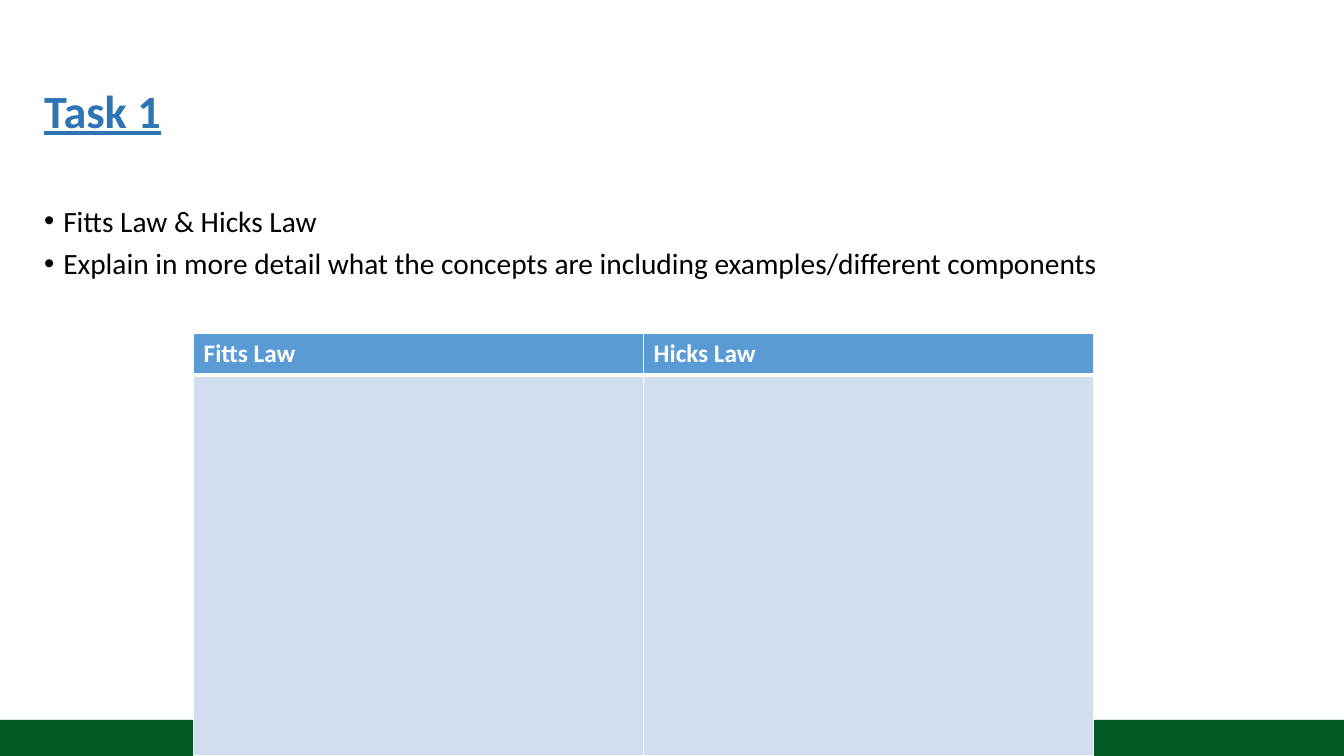
"""Build the Task 1 slide comparing Fitts Law and Hicks Law."""
from dataclasses import dataclass

from lxml.etree import SubElement
from pptx import Presentation
from pptx.dml.color import RGBColor
from pptx.enum.shapes import MSO_SHAPE
from pptx.enum.text import MSO_ANCHOR, MSO_AUTO_SIZE, PP_ALIGN
from pptx.oxml import parse_xml
from pptx.oxml.ns import nsdecls, qn
from pptx.util import Cm, Pt


@dataclass(frozen=True)
class Theme:
    font: str = "Calibri"
    title: str = "2E75B6"
    text: str = "000000"
    header: str = "5B9BD5"
    cell: str = "D2DEEF"
    line: str = "FFFFFF"
    footer: str = "015A22"
    title_size: int = 33
    body_size: int = 21
    table_size: int = 18


def style(font, size, color, bold=False, underline=False):
    font.name = T.font
    font.size = Pt(size)
    font.bold = bold
    font.underline = underline
    font.color.rgb = RGBColor.from_string(color)


def place(sp, left, top, width, height):
    sp.left, sp.top, sp.width, sp.height = Cm(left), Cm(top), Cm(width), Cm(height)


T = Theme()
prs = Presentation()
prs.slide_width, prs.slide_height = Cm(33.87), Cm(19.05)
s = prs.slides.add_slide(prs.slide_layouts[1])
title, body = s.placeholders[0], s.placeholders[1]

bar = s.shapes.add_shape(MSO_SHAPE.RECTANGLE, 0, Cm(18.14), prs.slide_width, Cm(0.91))
bar.fill.solid()
bar.fill.fore_color.rgb = RGBColor.from_string(T.footer)
bar.line.fill.background()
bar.shadow.inherit = False
effects = bar._element.spPr.find(qn("a:effectLst"))
effects.append(parse_xml(
    f'<a:outerShdw {nsdecls("a")} blurRad="{Pt(3.5)}" dist="{Pt(2.2)}" dir="5400000" rotWithShape="0">'
    '<a:srgbClr val="000000"><a:alpha val="32000"/></a:srgbClr></a:outerShdw>'))
s.shapes._spTree.insert(2, bar._element)

place(title, 0.86, 1.02, 32.21, 3.68)
tf = title.text_frame
tf.text = "Task 1"
tf.vertical_anchor = MSO_ANCHOR.MIDDLE
tf.auto_size = MSO_AUTO_SIZE.NONE
p = tf.paragraphs[0]
p.alignment = PP_ALIGN.LEFT
p.line_spacing = 0.9
style(p.runs[0].font, T.title_size, T.title, bold=True, underline=True)

place(body, 0.86, 5.08, 32.21, 13.72)
tf = body.text_frame
tf.text = ("Fitts Law & Hicks Law\n"
           "Explain in more detail what the concepts are including examples/different components")
tf.auto_size = MSO_AUTO_SIZE.NONE
for i, p in enumerate(tf.paragraphs):
    p.line_spacing = 0.9
    p.space_before = Pt(7.5 if i else 0)
    pPr = p._p.get_or_add_pPr()
    pPr.set("marL", str(Cm(0.48)))
    pPr.set("indent", str(-Cm(0.48)))
    SubElement(pPr, qn("a:buFont"), typeface="Arial")
    SubElement(pPr, qn("a:buChar"), char="•")
    style(p.runs[0].font, T.body_size, T.text)

heights = (1.04, 9.6)
table = s.shapes.add_table(2, 2, Cm(4.88), Cm(8.41), Cm(22.68), Cm(sum(heights))).table
for row, height in zip(table.rows, heights):
    row.height = Cm(height)
for cell, name in zip(table.rows[0].cells, ("Fitts Law", "Hicks Law")):
    cell.text = name
    style(cell.text_frame.paragraphs[0].runs[0].font, T.table_size, T.line, bold=True)
for row, color, top, bottom in zip(table.rows, (T.header, T.cell), (1, 3), (3, 1)):
    for cell in row.cells:
        cell.fill.solid()
        cell.fill.fore_color.rgb = RGBColor.from_string(color)
        tcPr = cell._tc.get_or_add_tcPr()
        for i, (side, width) in enumerate(zip("LRTB", (1, 1, top, bottom))):
            tcPr.insert(i, parse_xml(
                f'<a:ln{side} {nsdecls("a")} w="{Pt(width)}"><a:solidFill>'
                f'<a:srgbClr val="{T.line}"/></a:solidFill></a:ln{side}>'))

prs.save("out.pptx")
